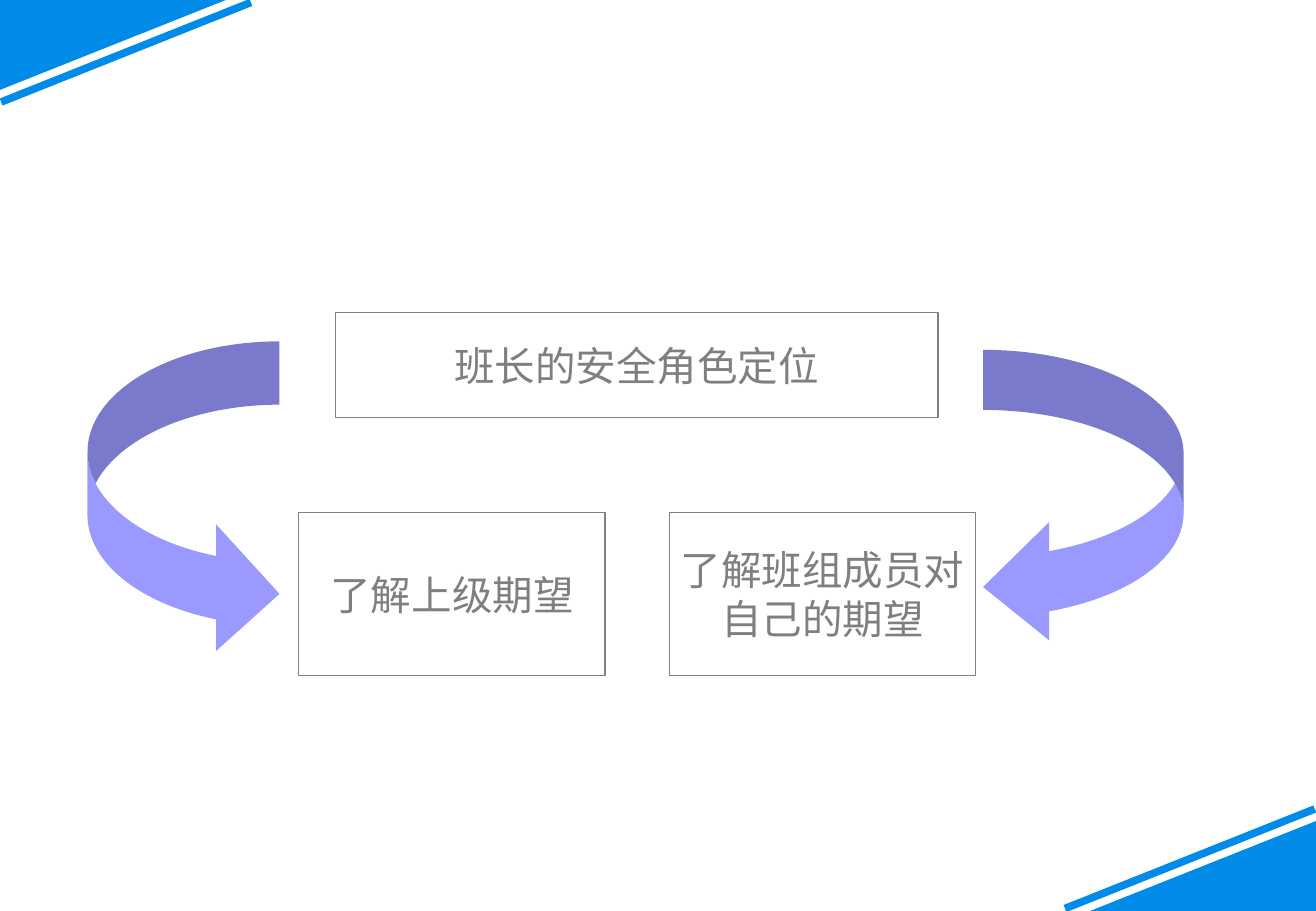
import pptx
import pptx.util
import pptx.dml.color
import pptx.enum.shapes
import pptx.enum.text
import pptx.oxml.ns
import lxml.etree

WIDTH = pptx.util.Inches(10.83)
HEIGHT = pptx.util.Inches(7.5)
GRID = 100  # columns across and rows down the slide
COLORS = {"corner": "018BE9", "gray": "7F7F7F", "arrow": "9999FF"}
KINDS = pptx.enum.shapes.MSO_SHAPE


def color(name):
    return pptx.dml.color.RGBColor.from_string(COLORS[name])


def span(cols, rows):
    """Turn grid columns and rows into slide lengths."""
    return round(cols * WIDTH / GRID), round(rows * HEIGHT / GRID)


def add_shape(slide, kind, left, top, wide, high):
    shape = slide.shapes.add_shape(kind, *span(left, top), *span(wide, high))
    shape.shadow.inherit = False
    return shape


def set_text(shape, lines, size=24, font="Arial", ink="gray"):
    frame = shape.text_frame
    frame.word_wrap = False
    frame.vertical_anchor = pptx.enum.text.MSO_ANCHOR.MIDDLE
    frame.text = "\n".join(lines)
    for para in frame.paragraphs:
        para.alignment = pptx.enum.text.PP_ALIGN.CENTER
        para.font.size = pptx.util.Pt(size)
        para.font.name = font
        para.font.color.rgb = color(ink)


def add_box(slide, lines, *area):
    box = add_shape(slide, KINDS.RECTANGLE, *area)
    box.fill.background()
    box.line.color.rgb = color("gray")
    box.line.width = pptx.util.Pt(0.75)
    set_text(box, lines)


def add_arrow(slide, kind, area, bends):
    arrow = add_shape(slide, kind, *area)
    arrow.fill.solid()
    arrow.fill.fore_color.rgb = color("arrow")
    arrow.line.fill.background()
    for index, bend in enumerate(bends):
        arrow.adjustments[index] = bend


def add_corner(slide, turned):
    """Draw a triangle and stripe at top left, or half a turn round."""
    def spot(col, row):
        return span(GRID - col, GRID - row) if turned else span(col, row)

    form = slide.shapes.build_freeform(*spot(0, 0))
    form.add_line_segments([spot(17.17, 0), spot(0, 9.87)], close=True)
    wedge = form.convert_to_shape()
    wedge.shadow.inherit = False
    wedge.fill.solid()
    wedge.fill.fore_color.rgb = color("corner")
    wedge.line.fill.background()

    stripe = slide.shapes.add_connector(
        pptx.enum.shapes.MSO_CONNECTOR.STRAIGHT,
        *spot(0.09, 11.2), *spot(19.07, 0.27))
    stripe.line.color.rgb = color("corner")
    stripe.line.width = pptx.util.Pt(4.5)
    lxml.etree.SubElement(stripe._element.spPr,
                          pptx.oxml.ns.qn("a:effectLst"))


def main():
    deck = pptx.Presentation()
    deck.slide_width, deck.slide_height = WIDTH, HEIGHT
    slide = deck.slides.add_slide(deck.slide_layouts[6])

    for turned in (True, False):
        add_corner(slide, turned)

    add_box(slide, ["班长的安全角色定位"], 25.48, 34.27, 45.8, 11.6)
    goals = [(22.71, ["了解上级期望"]),
             (50.86, ["了解班组成员对", "自己的期望"])]
    for left, lines in goals:
        add_box(slide, lines, left, 56.27, 23.27, 17.87)

    add_arrow(slide, KINDS.CURVED_RIGHT_ARROW,
              (6.65, 37.47, 14.59, 34.67), (0.33, 0.66, 0.33))
    add_arrow(slide, KINDS.CURVED_LEFT_ARROW,
              (74.7, 38.4, 15.24, 32.53), (0.3, 0.59, 0.33))

    deck.save("out.pptx")


if __name__ == "__main__":
    main()
